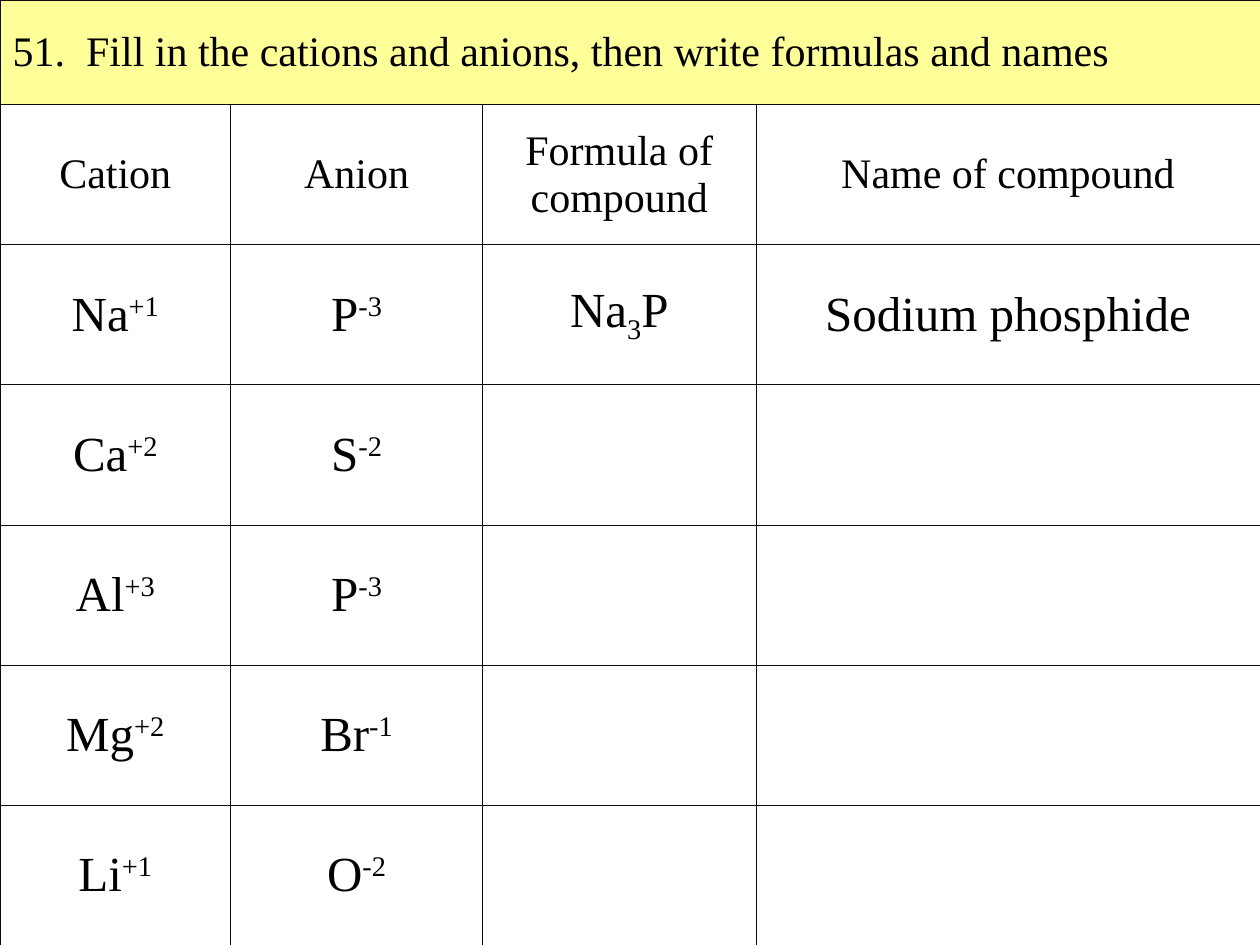
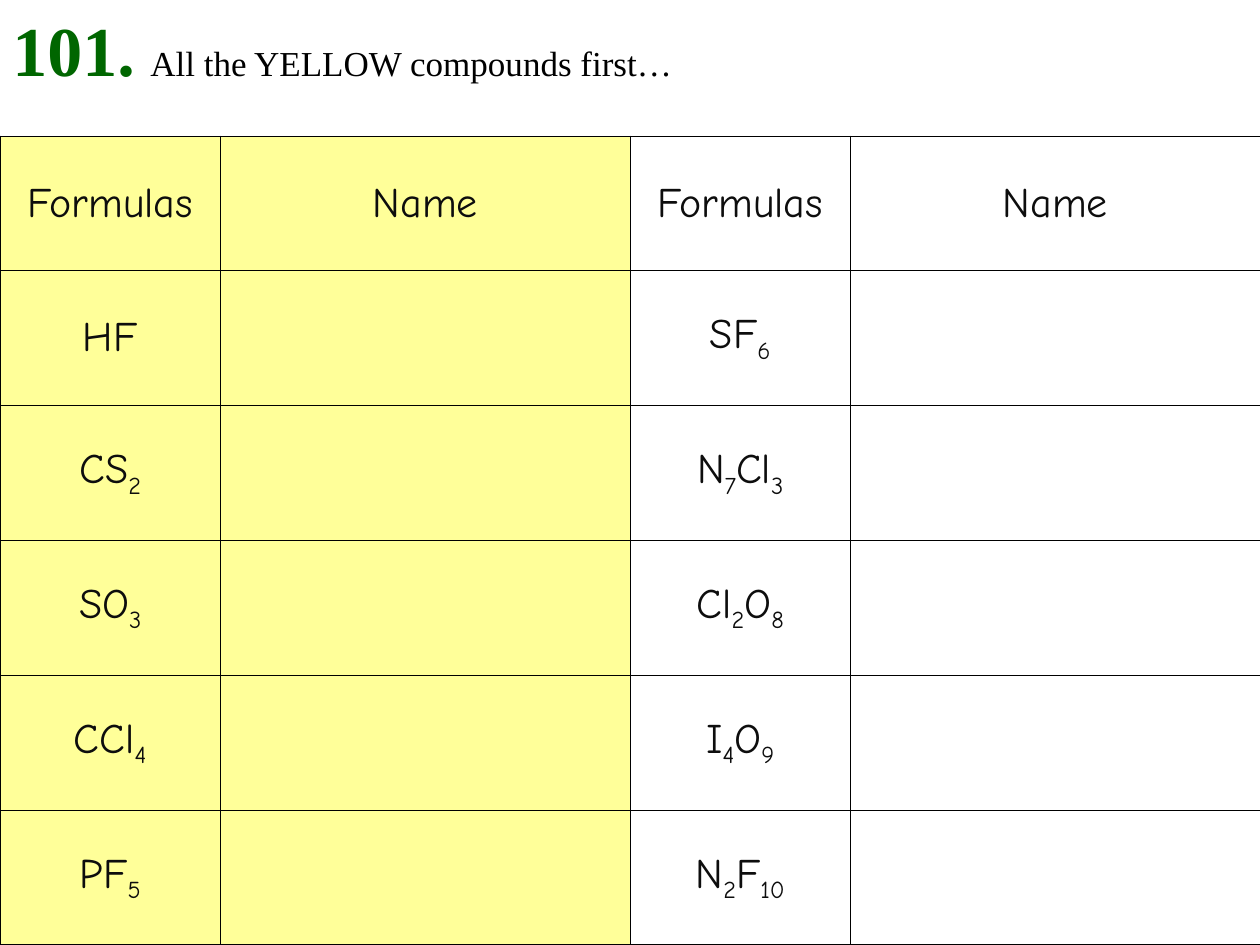
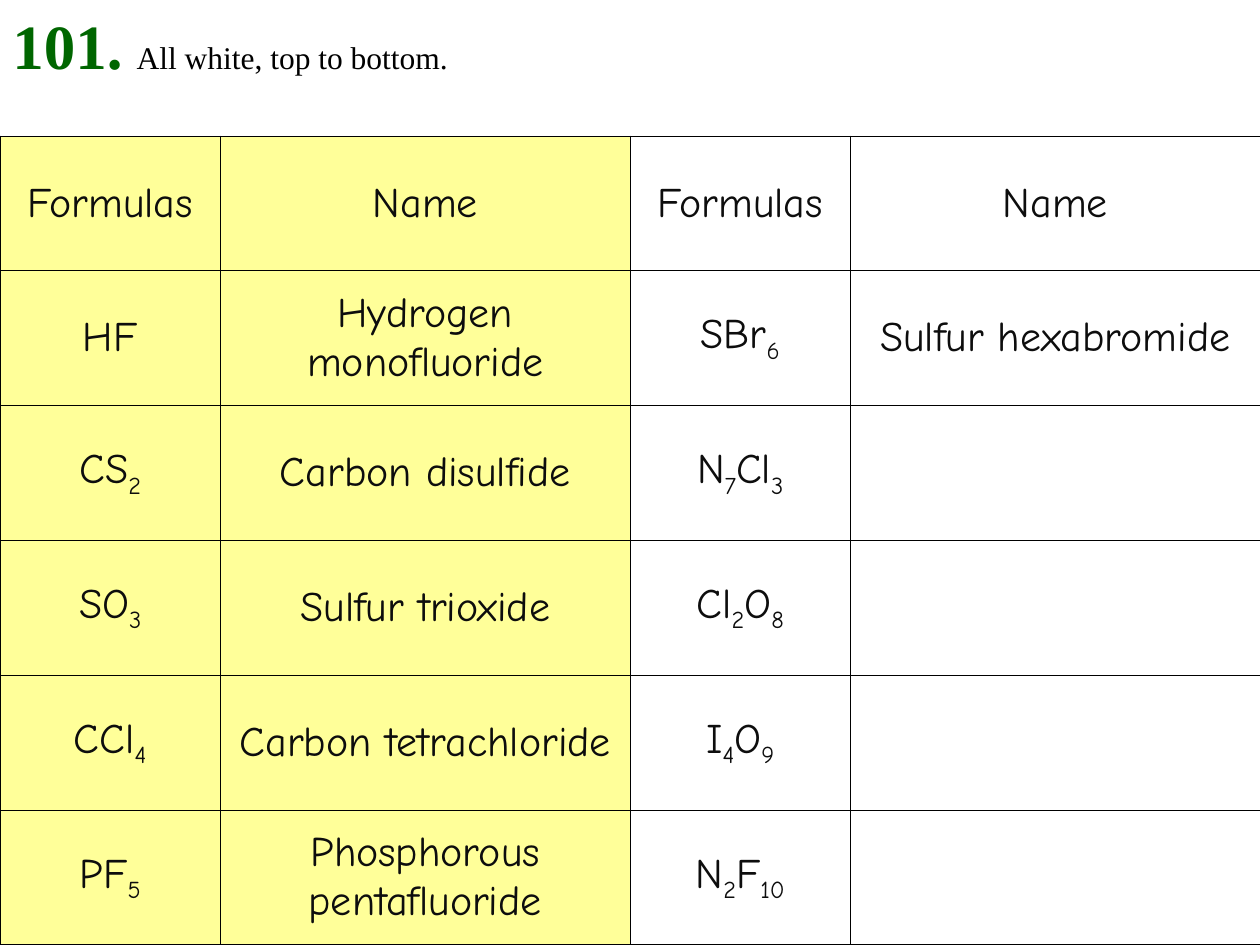
"""Build three chemistry worksheet slides about compound names and formulas."""
from dataclasses import dataclass
from itertools import groupby
from typing import Optional

from lxml import etree
from pptx import Presentation
from pptx import util as u
from pptx.dml.color import RGBColor
from pptx.enum import text
from pptx.oxml import ns

BLACK = RGBColor(0x00, 0x00, 0x00)
INK = RGBColor(0x0D, 0x0D, 0x0D)
GREEN = RGBColor(0x00, 0x66, 0x00)
YELLOW = RGBColor(0xFF, 0xFF, 0x99)
SERIF = "Times New Roman"
HAND = "Comic Neue"
SUPERSCRIPT = 30
SUBSCRIPT = -25
SLIDE_WIDTH = 10
SLIDE_HEIGHT = 7.5
NAMING_TOP = 1.08


@dataclass(frozen=True)
class Style:
    """Font settings of a span."""
    size: int
    font: str = SERIF
    color: RGBColor = BLACK
    bold: bool = False


@dataclass(frozen=True)
class Span:
    """Piece of text with its baseline shift in percent."""
    words: str
    baseline: int = 0


@dataclass(frozen=True)
class Entry:
    """Content of one table cell."""
    spans: list[Span]
    style: Style
    fill: Optional[RGBColor] = None
    centered: bool = True
    space_before: int = 0


@dataclass(frozen=True)
class Grid:
    """Position, track sizes and border of a table."""
    top: float
    columns: list[float]
    rows: list[float]
    border: RGBColor
    border_width: float


@dataclass(frozen=True)
class Heading:
    """Numbered instruction above a naming table."""
    words: str
    number_size: int
    words_size: int
    height: float


ION_HEADER = Style(24)
ION_BODY = Style(28)
NAMING = Style(24, HAND, INK)

ION_COLUMNS = [1.83, 2, 2.17, 4]
ION_TITLE_HEIGHT = 0.83
ION_GRID = Grid(0, ION_COLUMNS,
                [ION_TITLE_HEIGHT] + [(SLIDE_HEIGHT - ION_TITLE_HEIGHT) / 6] * 6, INK, 0.25)
NAMING_GRID = Grid(NAMING_TOP, [1.75, 3.25] * 2,
                   [(SLIDE_HEIGHT - NAMING_TOP) / 6] * 6, BLACK, 0.5)

ION_TITLE = "51.  Fill in the cations and anions, then write formulas and names"
ION_HEADERS = ["Cation", "Anion", "Formula of compound", "Name of compound"]
ION_PAIRS = [
    ("Na+1", "P-3", "Na3P", "Sodium phosphide"),
    ("Ca+2", "S-2", "", ""),
    ("Al+3", "P-3", "", ""),
    ("Mg+2", "Br-1", "", ""),
    ("Li+1", "O-2", "", ""),
]

NAMING_HEADERS = ["Formulas", "Name"] * 2
YELLOW_FORMULAS = ["HF", "CS2", "SO3", "CCl4", "PF5"]
YELLOW_NAMES = ["Hydrogen monofluoride", "Carbon disulfide", "Sulfur trioxide",
                "Carbon tetrachloride", "Phosphorous pentafluoride"]
WHITE_FORMULAS = ["N7Cl3", "Cl2O8", "I4O9", "N2F10"]
NO_NAMES = [""] * 5


def plain(words: str) -> list[Span]:
    """Return the words as one span, or none when empty."""
    return [Span(words)] if words else []


def ion(symbol: str) -> list[Span]:
    """Raise the two-character charge that ends an ion symbol."""
    return [Span(symbol[:-2]), Span(symbol[-2:], SUPERSCRIPT)]


def formula(symbols: str) -> list[Span]:
    """Lower the digits of a chemical formula."""
    return [Span("".join(part), SUBSCRIPT if digits else 0)
            for digits, part in groupby(symbols, str.isdigit)]


def add_span(para, piece: Span, style: Style) -> None:
    """Append one styled span to a paragraph."""
    span = para.add_run()
    span.text = piece.words
    span.font.size = u.Pt(style.size)
    span.font.name = style.font
    span.font.bold = style.bold
    span.font.color.rgb = style.color
    if piece.baseline:
        span.font._element.set("baseline", str(piece.baseline * 1000))


def set_space_before(para, percent: int) -> None:
    """Set the space before a paragraph as a share of its line."""
    properties = para._p.get_or_add_pPr()
    space = etree.SubElement(properties, ns.qn("a:spcBef"))
    etree.SubElement(space, ns.qn("a:spcPct")).set("val", str(percent * 1000))


def set_borders(cell, color: RGBColor, width: float) -> None:
    """Draw the same solid line on all four sides of a cell."""
    properties = cell._tc.get_or_add_tcPr()
    for side in ("a:lnL", "a:lnR", "a:lnT", "a:lnB"):
        line = etree.SubElement(properties, ns.qn(side))
        line.set("w", str(u.Pt(width)))
        fill = etree.SubElement(line, ns.qn("a:solidFill"))
        etree.SubElement(fill, ns.qn("a:srgbClr")).set("val", str(color))


def fill_cell(cell, entry: Entry) -> None:
    """Write and paint one table cell."""
    cell.vertical_anchor = text.MSO_ANCHOR.MIDDLE
    if entry.fill is None:
        cell.fill.background()
    else:
        cell.fill.solid()
        cell.fill.fore_color.rgb = entry.fill
    para = cell.text_frame.paragraphs[0]
    if entry.centered:
        para.alignment = text.PP_ALIGN.CENTER
    if entry.space_before:
        set_space_before(para, entry.space_before)
    for piece in entry.spans:
        add_span(para, piece, entry.style)


def add_grid(page, grid: Grid, entries: list[list[Entry]]):
    """Add a table; a row with a single entry spans all columns."""
    frame = page.shapes.add_table(
        len(grid.rows), len(grid.columns), u.Inches(0), u.Inches(grid.top),
        u.Inches(sum(grid.columns)), u.Inches(sum(grid.rows)))
    table = frame.table
    table.first_row = table.horz_banding = False
    for column, width in zip(table.columns, grid.columns):
        column.width = u.Inches(width)
    for row, height in zip(table.rows, grid.rows):
        row.height = u.Inches(height)
    for cell in table.iter_cells():
        set_borders(cell, grid.border, grid.border_width)
    for index, row_entries in enumerate(entries):
        if len(row_entries) == 1:
            table.cell(index, 0).merge(table.cell(index, len(grid.columns) - 1))
        for column, entry in enumerate(row_entries):
            fill_cell(table.cell(index, column), entry)


def add_heading(page, heading: Heading) -> None:
    """Add the green number and its instruction."""
    box = page.shapes.add_textbox(u.Inches(0), u.Inches(0),
                                  u.Inches(SLIDE_WIDTH), u.Inches(heading.height))
    box.text_frame.word_wrap = True
    para = box.text_frame.paragraphs[0]
    set_space_before(para, 50)
    add_span(para, Span("101."), Style(heading.number_size, color=GREEN, bold=True))
    add_span(para, Span("  " + heading.words), Style(heading.words_size))


def add_ion_page(deck) -> None:
    """Add the slide that pairs cations with anions."""
    page = deck.slides.add_slide(deck.slide_layouts[6])
    entries = [[Entry(plain(ION_TITLE), ION_HEADER, YELLOW, False, 20)],
               [Entry(plain(words), ION_HEADER, space_before=20) for words in ION_HEADERS]]
    for cation, anion, compound, name in ION_PAIRS:
        row = [ion(cation), ion(anion), formula(compound), plain(name)]
        entries.append([Entry(spans, ION_BODY, space_before=20) for spans in row])
    add_grid(page, ION_GRID, entries)


def add_naming_page(deck, heading: Heading, yellow_names: list[str],
                    white_formulas: list[str], white_names: list[str]) -> None:
    """Add a slide with a yellow and a white pair of formula and name columns."""
    page = deck.slides.add_slide(deck.slide_layouts[6])
    add_heading(page, heading)
    rows = [[plain(words) for words in NAMING_HEADERS]]
    for left, left_name, right, right_name in zip(
            YELLOW_FORMULAS, yellow_names, white_formulas, white_names):
        rows.append([formula(left), plain(left_name), formula(right), plain(right_name)])
    entries = [[Entry(spans, NAMING, YELLOW if column < 2 else None)
                for column, spans in enumerate(row)] for row in rows]
    add_grid(page, NAMING_GRID, entries)


def main() -> None:
    """Build and save the deck."""
    deck = Presentation()
    deck.slide_width = u.Inches(SLIDE_WIDTH)
    deck.slide_height = u.Inches(SLIDE_HEIGHT)
    add_ion_page(deck)
    add_naming_page(deck, Heading("All the YELLOW compounds first…", 40, 20, 0.77),
                    NO_NAMES, ["SF6"] + WHITE_FORMULAS, NO_NAMES)
    add_naming_page(deck, Heading("All white, top to bottom.", 36, 18, 1.46),
                    YELLOW_NAMES, ["SBr6"] + WHITE_FORMULAS,
                    ["Sulfur hexabromide"] + NO_NAMES[1:])
    deck.save("out.pptx")


if __name__ == "__main__":
    main()
